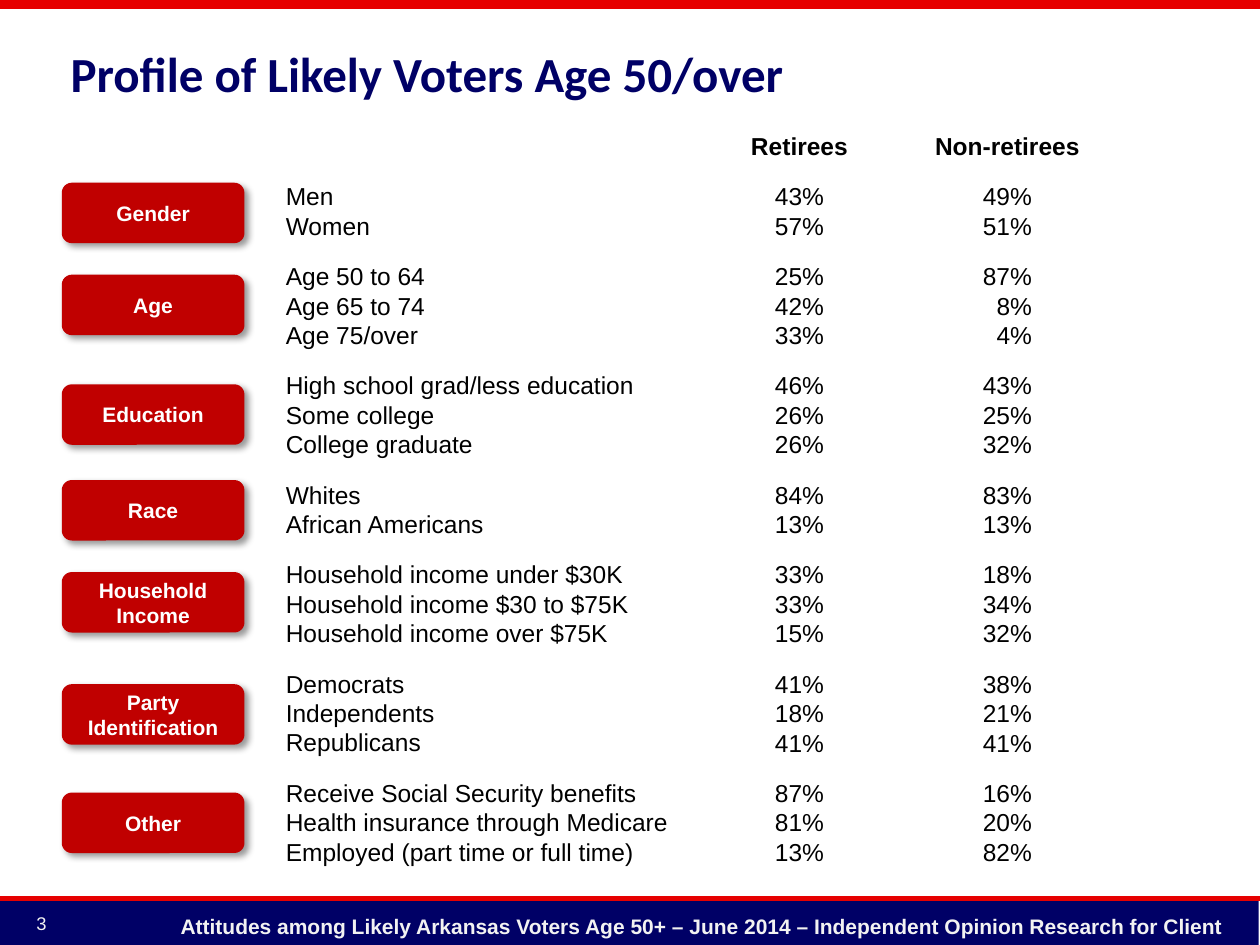
from copy import deepcopy
from lxml.etree import SubElement as Sub
from pptx import Presentation
from pptx.dml.color import RGBColor as RGB
from pptx.enum.shapes import MSO_CONNECTOR as LINE, MSO_SHAPE as SHAPE
from pptx.enum.text import MSO_ANCHOR as ANCHOR, MSO_AUTO_SIZE as AUTO, PP_ALIGN as ALIGN
from pptx.oxml.ns import qn
from pptx.util import Inches, Pt

NAVY = RGB(0x00, 0x00, 0x66)
RED = RGB(0xE6, 0x00, 0x00)
BRICK = RGB(0xC0, 0x00, 0x00)
PALE = RGB(0xF2, 0xF2, 0xF2)
WHITE = RGB(0xFF, 0xFF, 0xFF)
BLACK = RGB(0x00, 0x00, 0x00)


def write(par, lines, size, color, bold=False, align=ALIGN.LEFT, face="Arial"):
    par.alignment = align
    for i, line in enumerate(lines):
        if i:
            par.add_line_break()
            par._p[-1].append(deepcopy(run._r.rPr))
        run = par.add_run()
        run.text = line
        font = run.font
        font.name, font.size, font.bold = face, Pt(size), bold
        font.color.rgb = color


def add_box(left, top, width, height, wrap=True):
    box = slide.shapes.add_textbox(Inches(left), Inches(top), Inches(width), Inches(height))
    box.text_frame.word_wrap = wrap
    return box.text_frame


deck = Presentation()
deck.slide_width, deck.slide_height = Inches(10), Inches(7.5)
slide = deck.slides.add_slide(deck.slide_layouts[5])

band = slide.shapes.add_shape(SHAPE.RECTANGLE, Inches(-0.01), Inches(7.14), Inches(10), Inches(0.37))
band.shadow.inherit = False
band.fill.solid()
band.fill.fore_color.rgb = NAVY
band.line.fill.background()

for left, top, weight in [(-0.02, 7.13, 3), (-0.01, 0.03, 6)]:
    rule = slide.shapes.add_connector(LINE.STRAIGHT, Inches(left), Inches(top), Inches(10), Inches(top))
    rule.line.color.rgb = RED
    rule.line.width = Pt(weight)
    Sub(rule._element.spPr, qn("a:effectLst"))

foot = add_box(1.09, 7.2, 8.72, 0.3, False)
note = "Attitudes among Likely Arkansas Voters Age 50+ – June 2014 – Independent Opinion Research for Client"
write(foot.paragraphs[0], [note], 12, PALE, True, ALIGN.RIGHT)
write(add_box(0.19, 7.19, 0.64, 0.33).paragraphs[0], ["3"], 10.5, PALE)

title = slide.shapes.title
title.left, title.top, title.width, title.height = Inches(0.46), Inches(0), Inches(8.57), Inches(1.25)
frame = title.text_frame
frame.auto_size = AUTO.NONE
frame.vertical_anchor = ANCHOR.MIDDLE
frame.paragraphs[0].line_spacing = 0.8
write(frame.paragraphs[0], ["Profile of Likely Voters Age 50/over"], 28, NAVY, True, face="Calibri")

groups = [
    ["Men", "Women"],
    ["Age 50 to 64", "Age 65 to 74", "Age 75/over"],
    ["High school grad/less education", "Some college", "College graduate"],
    ["Whites", "African Americans"],
    ["Household income under $30K", "Household income $30 to $75K", "Household income over $75K"],
    ["Democrats", "Independents", "Republicans"],
    ["Receive Social Security benefits", "Health insurance through Medicare",
     "Employed (part time or full time)"],
]
frame = add_box(2.17, 1.39, 4.47, 5.76)
for i, lines in enumerate(groups):
    par = frame.add_paragraph() if i else frame.paragraphs[0]
    par.space_before = Pt(12 if i else 0)
    write(par, lines, 14, BLACK)

columns = [
    (7.05, 1.89, ["Non-retirees", "49% 51%", "87%", "8% 4%", "43% 25% 32%", "83% 13%",
                  "18% 34% 32%", "38% 21% 41%", "16% 20% 82%"]),
    (5.64, 1.41, ["Retirees", "43% 57%", "25% 42% 33%", "46% 26% 26%", "84% 13%",
                  "33% 33% 15%", "41% 18% 41%", "87% 81% 13%"]),
]
for left, width, blocks in columns:
    frame = add_box(left, 0.99, width, 5.99)
    for i, block in enumerate(blocks):
        lines = block.split()
        par = frame.add_paragraph() if i else frame.paragraphs[0]
        short = len(lines[0]) == 2
        if short:
            par._p.get_or_add_pPr().set("marL", str(Inches(0.11)))
        par.space_before = Pt(12 if i and not short else 0)
        write(par, lines, 14, BLACK, i == 0, ALIGN.CENTER)

tags = [
    (1.45, ["Gender"]), (2.18, ["Age"]), (3.05, ["Education"]), (3.81, ["Race"]),
    (4.54, ["Household Income"]), (5.43, ["Party", "Identification"]), (6.29, ["Other"]),
]
for top, lines in tags:
    tag = slide.shapes.add_shape(SHAPE.ROUNDED_RECTANGLE, Inches(0.49), Inches(top), Inches(1.45), Inches(0.48))
    tag.fill.solid()
    tag.fill.fore_color.rgb = BRICK
    tag.line.fill.background()
    tag.shadow.inherit = False
    glow = Sub(tag._element.spPr.find(qn("a:effectLst")), qn("a:outerShdw"), blurRad=str(Pt(4)),
               dist=str(Pt(3)), dir="2700000", algn="tl", rotWithShape="0")
    Sub(Sub(glow, qn("a:srgbClr"), val="000000"), qn("a:alpha"), val="40000")
    frame = tag.text_frame
    frame.word_wrap = True
    frame.vertical_anchor = ANCHOR.MIDDLE
    write(frame.paragraphs[0], lines, 12, WHITE, True, ALIGN.CENTER)

deck.save("out.pptx")
